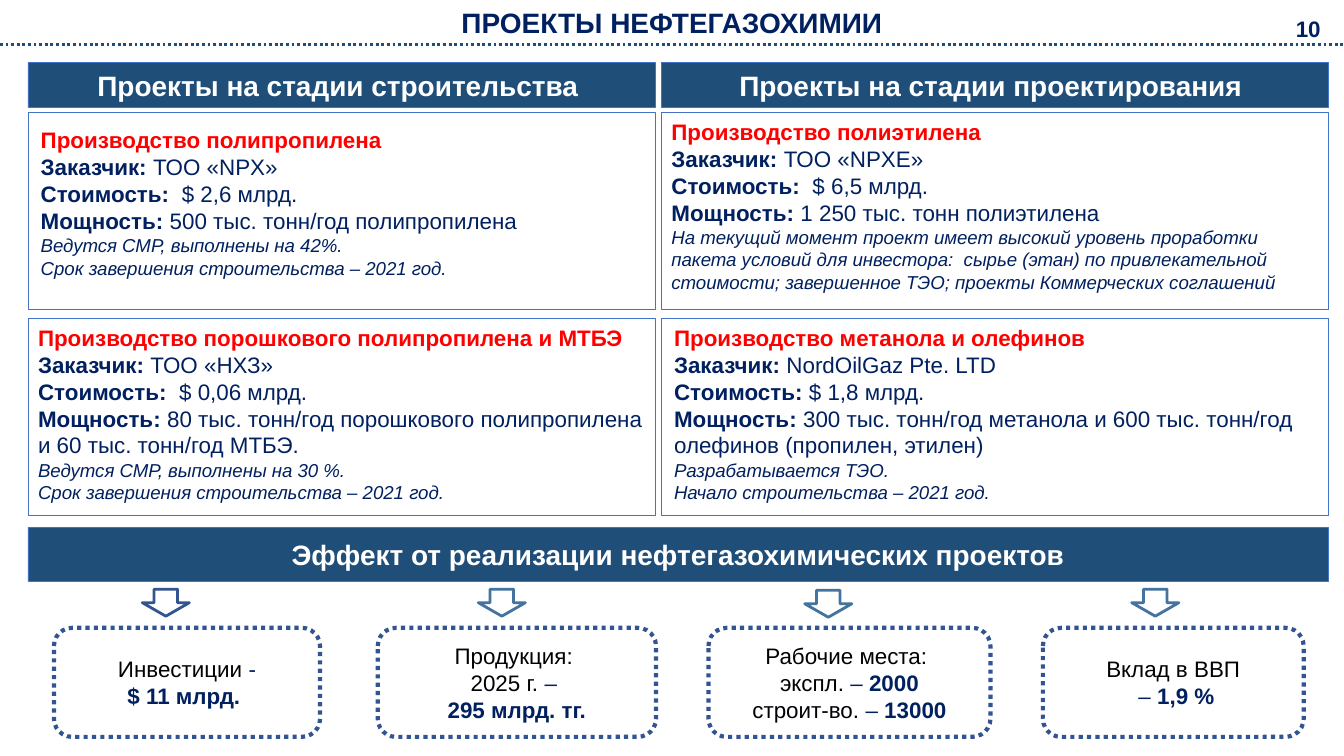
from lxml import etree
from pptx import Presentation
from pptx.dml.color import RGBColor
from pptx.enum.dml import MSO_LINE
from pptx.enum.shapes import MSO_CONNECTOR, MSO_SHAPE
from pptx.enum.text import MSO_ANCHOR, MSO_AUTO_SIZE, PP_ALIGN
from pptx.oxml.ns import qn
from pptx.util import Cm, Pt

RECT, ROUND, ARROW = MSO_SHAPE.RECTANGLE, MSO_SHAPE.ROUNDED_RECTANGLE, MSO_SHAPE.DOWN_ARROW
LEFT, CENTER = PP_ALIGN.LEFT, PP_ALIGN.CENTER
TOP, MIDDLE = MSO_ANCHOR.TOP, MSO_ANCHOR.MIDDLE
DOTTED = MSO_LINE.ROUND_DOT

NAVY, RED, BLACK, WHITE = "002060", "FF0000", "000105", "FFFFFF"
BAND, FRAME, DOTS, STEEL = "1F4E79", "4472C4", "325491", "43739E"

# Content
TITLE = "ПРОЕКТЫ НЕФТЕГАЗОХИМИИ"
PAGE = "10"
EFFECT = "Эффект от реализации нефтегазохимических проектов"

# Each card: text box (left, top, width, height), heading, facts, notes
COLUMNS = [
    {"header": "Проекты на стадии строительства ", "left": 0.53, "width": 11.86, "cards": [
        ((0.58, 2.29, 11.96, 3.1), "Производство полипропилена",
         [("Заказчик: ", "ТОО «NPX»"),
          ("Стоимость:  ", "$ 2,6 млрд."),
          ("Мощность: ", "500 тыс. тонн/год полипропилена")],
         ["Ведутся СМР, выполнены на 42%.",
          "Срок завершения строительства – 2021 год."]),
        ((0.53, 6.02, 11.89, 3.61), "Производство порошкового полипропилена и МТБЭ",
         [("Заказчик: ", "ТОО «НХЗ»"),
          ("Стоимость:  ", "$ 0,06 млрд."),
          ("Мощность: ", "80 тыс. тонн/год порошкового полипропилена и 60 тыс. тонн/год МТБЭ.")],
         ["Ведутся СМР, выполнены на 30 %.",
          "Срок завершения строительства – 2021 год."]),
    ]},
    {"header": "Проекты на стадии проектирования ", "left": 12.5, "width": 12.6, "cards": [
        ((12.5, 2.13, 12.47, 3.53), "Производство полиэтилена",
         [("Заказчик: ", "ТОО «NPXE»"),
          ("Стоимость:  ", "$ 6,5 млрд."),
          ("Мощность: ", "1 250 тыс. тонн полиэтилена")],
         ["На текущий момент проект имеет высокий уровень проработки пакета условий "
          "для инвестора:  сырье (этан) по привлекательной стоимости; завершенное ТЭО; "
          "проекты Коммерческих соглашений"]),
        ((12.55, 6.02, 12.42, 3.61), "Производство метанола и олефинов",
         [("Заказчик: ", "NordOilGaz Pte. LTD"),
          ("Стоимость: ", "$ 1,8 млрд."),
          ("Мощность: ", "300 тыс. тонн/год метанола и 600 тыс. тонн/год олефинов "
                         "(пропилен, этилен)")],
         ["Разрабатывается ТЭО.", "Начало строительства – 2021 год."]),
    ]},
]

# Each effect: box left, box width, arrow left, arrow top, arrow colour,
# lines of (plain, dash, value)
EFFECTS = [
    (1.02, 5.03, 2.69, 11.13, DOTS,
     [("Инвестиции ", "-", ""), ("", "", "$ 11 млрд. ")]),
    (7.14, 5.26, 9.04, 11.13, STEEL,
     [("Продукция: ", "", ""), ("2025 г. ", "– ", ""), ("", "", "295 млрд. тг.")]),
    (13.39, 5.33, 15.21, 11.15, STEEL,
     [("Рабочие места: ", "", ""), ("экспл. ", "– ", "2000"), ("строит-во. ", "– ", "13000")]),
    (19.71, 4.93, 21.39, 11.13, STEEL,
     [("Вклад в ВВП", "", ""), ("", " – ", "1,9 %")]),
]

# Vertical layout
HEADER_TOP, HEADER_H = 1.19, 0.84
CARD_TOP, CARD_H, CARD_STEP = 2.13, 3.71, 3.89
BAND_TOP, BAND_H = 9.96, 1.02
BOX_TOP, BOX_H = 11.86, 2.06


def rgb(value):
    return RGBColor.from_string(value)


def box(*lengths):
    return [Cm(v) for v in lengths]


def run(text, color=NAVY, size=12, bold=False, italic=False):
    return text, color, size, bold, italic


def write(sp, paragraphs, align=LEFT, anchor=TOP, before=0):
    tf = sp.text_frame
    tf.word_wrap = True
    tf.auto_size = MSO_AUTO_SIZE.NONE
    tf.vertical_anchor = anchor
    tf.margin_left = tf.margin_right = Cm(0.19)
    tf.margin_top = tf.margin_bottom = Cm(0.1)
    for i, runs in enumerate(paragraphs):
        p = tf.add_paragraph() if i else tf.paragraphs[0]
        p.alignment = align
        p.space_before = Pt(before)
        for text, color, size, bold, italic in runs:
            r = p.add_run()
            r.text = text
            font = r.font
            font.name, font.size, font.bold, font.italic = "Arial", Pt(size), bold, italic
            font.color.rgb = rgb(color)


def add_shape(kind, place, fill, line, weight):
    sp = slide.shapes.add_shape(kind, *box(*place))
    sp.shadow.inherit = False
    if fill:
        sp.fill.solid()
        sp.fill.fore_color.rgb = rgb(fill)
    else:
        sp.fill.background()
    sp.line.color.rgb = rgb(line)
    sp.line.width = Pt(weight)
    return sp


def add_band(text, *place):
    sp = add_shape(RECT, place, BAND, FRAME, 0.5)
    write(sp, [[run(text, WHITE, 15, True)]], CENTER, MIDDLE, before=6)


prs = Presentation()
prs.slide_width, prs.slide_height = Cm(25.4), Cm(14.28)
slide = prs.slides.add_slide(prs.slide_layouts[5])

# Title, rule and page number
title = slide.shapes.title
title.left, title.top, title.width, title.height = box(0, 0, 25.4, 0.84)
write(title, [[run(TITLE, size=15, bold=True)]], CENTER)

rule = slide.shapes.add_connector(MSO_CONNECTOR.STRAIGHT, *box(0, 0.84, 25.4, 0.84))
rule.line.color.rgb = rgb(BAND)
rule.line.width = Pt(1.5)
rule.line.dash_style = DOTTED
etree.SubElement(rule._element.spPr, qn("a:effectLst"))

page = slide.shapes.add_textbox(*box(24.05, 0.18, 1.35, 0.71))
write(page, [[run(PAGE, bold=True)]], CENTER)

# Project columns
for column in COLUMNS:
    left, width = column["left"], column["width"]
    add_band(column["header"], left, HEADER_TOP, width, HEADER_H)
    for i, (place, heading, facts, notes) in enumerate(column["cards"]):
        add_shape(RECT, (left, CARD_TOP + i * CARD_STEP, width, CARD_H), None, FRAME, 0.5)
        lines = [[run(heading, RED, bold=True)]]
        lines += [[run(label, bold=True), run(value)] for label, value in facts]
        lines += [[run(note, size=10, italic=True)] for note in notes]
        write(slide.shapes.add_textbox(*box(*place)), lines)

# Effects
first, last = COLUMNS[0], COLUMNS[-1]
add_band(EFFECT, first["left"], BAND_TOP,
         last["left"] + last["width"] - first["left"], BAND_H)
for left, width, arrow_left, arrow_top, arrow_color, lines in EFFECTS:
    add_shape(ARROW, (arrow_left, arrow_top, 0.89, 0.51), WHITE, arrow_color, 1.5)
    sp = add_shape(ROUND, (left, BOX_TOP, width, BOX_H), WHITE, DOTS, 2.25)
    sp.line.dash_style = DOTTED
    write(sp, [[r for r in (run(plain, BLACK), run(dash), run(value, bold=True)) if r[0]]
               for plain, dash, value in lines], CENTER, MIDDLE)

prs.save("out.pptx")
